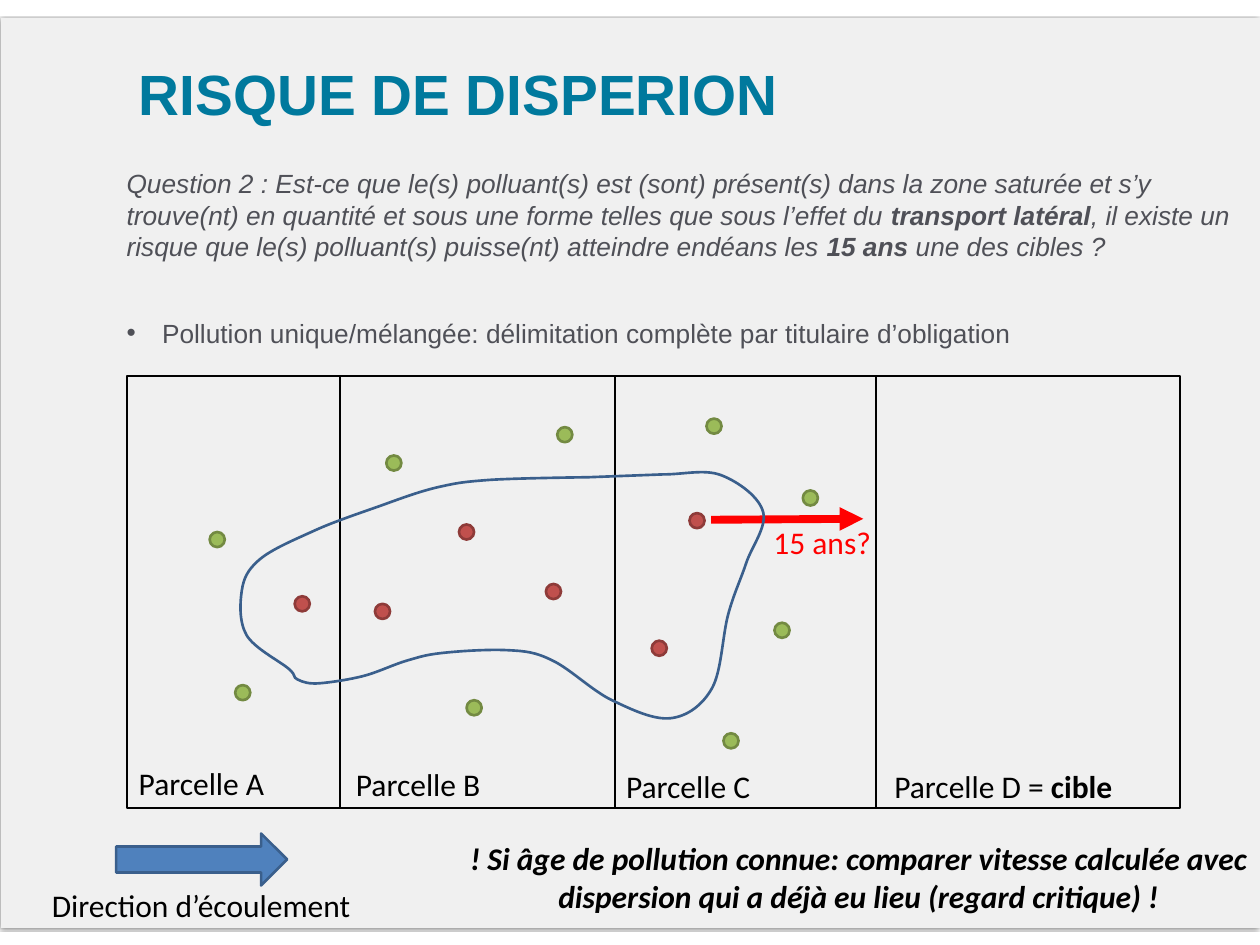
import pptx
import pptx.util
import pptx.dml.color
import pptx.enum.dml
import pptx.enum.shapes
import pptx.enum.text
import pptx.oxml
import pptx.oxml.ns
from pptx.util import Inches

COLORS = {
    "panel": "F0F0F0", "title": "00799D", "body": "4F5057", "black": "000000",
    "green": "9BBB59", "green_edge": "738A42", "red": "C0504D", "red_edge": "8E3B39",
    "flow": "4F81BD", "outline": "3A5F8C", "alert": "FF0000",
}
RGB = {name: pptx.dml.color.RGBColor.from_string(value) for name, value in COLORS.items()}
SHAPE = pptx.enum.shapes.MSO_SHAPE
ALIGN = pptx.enum.text.PP_ALIGN
NS = pptx.oxml.ns.nsdecls("a")


def style(item, fill, line, width):
    item.shadow.inherit = False
    if fill:
        item.fill.solid()
        item.fill.fore_color.rgb = RGB[fill]
    else:
        item.fill.background()
    if line:
        item.line.color.rgb = RGB[line]
        item.line.width = pptx.util.Pt(width)
    else:
        item.line.fill.background()


def write(paragraph, pieces, size, font, color, italic=False):
    for text, bold in pieces:
        run = paragraph.add_run()
        run.text = text
        run.font.size = pptx.util.Pt(size)
        run.font.name = font
        run.font.bold = bold
        run.font.italic = italic
        run.font.color.rgb = RGB[color]


deck = pptx.Presentation()
deck.slide_width = Inches(13.34)
deck.slide_height = Inches(10)
slide = deck.slides.add_slide(deck.slide_layouts[1])
shapes = slide.shapes

panel = shapes.add_shape(SHAPE.RECTANGLE, Inches(0.01), Inches(0.19), Inches(13.33), Inches(9.63))
style(panel, "panel", None, 0)
panel_effects = panel._element.spPr.find(pptx.oxml.ns.qn("a:effectLst"))
panel_effects.append(pptx.oxml.parse_xml(
    f'<a:outerShdw {NS} blurRad="25400" dist="12700" dir="5400000">'
    '<a:srgbClr val="000000"><a:alpha val="50000"/></a:srgbClr></a:outerShdw>'))
shapes._spTree.insert(2, panel._element)

title = shapes.title
question = slide.placeholders[1]
for holder, (left, top, width, height) in (
    (title, (1.47, 0.62, 12, 1.54)),
    (question, (1.34, 1.77, 11.99, 7.72)),
):
    holder.left, holder.top = Inches(left), Inches(top)
    holder.width, holder.height = Inches(width), Inches(height)
    frame = holder.text_frame
    frame.margin_left = frame.margin_right = frame.margin_top = frame.margin_bottom = 0
    frame.auto_size = pptx.enum.text.MSO_AUTO_SIZE.NONE

title.text_frame.margin_bottom = Inches(0.08)
title.text_frame.text = "RISQUE DE DISPERION\v"
heading = title.text_frame.paragraphs[0]
heading.alignment = ALIGN.LEFT
for run in heading.runs:
    run.font.size = pptx.util.Pt(43.2)
    run.font.name = "Arial"
    run.font.bold = True
    run.font.color.rgb = RGB["title"]

intro = question.text_frame.paragraphs[0]
intro_properties = intro._p.get_or_add_pPr()
intro_properties.set("marL", "0")
intro_properties.set("indent", "0")
intro_properties.append(pptx.oxml.parse_xml(f"<a:buNone {NS}/>"))
write(intro, [
    ("Question 2 : Est-ce que le(s) polluant(s) est (sont) présent(s) dans la zone saturée "
     "et s’y trouve(nt) en quantité et sous une forme telles que sous l’effet du ", False),
    ("transport latéral", True),
    (", il existe un risque que le(s) polluant(s) puisse(nt) atteindre endéans les ", False),
    ("15 ans ", True),
    ("une des cibles ?", False),
], 20, "Arial", "body", italic=True)
delimitation = question.text_frame.add_paragraph()
write(delimitation, [
    ("Pollution unique/mélangée: délimitation complète par titulaire d’obligation", False),
], 20, "Arial", "body")
for paragraph, before in ((intro, 0), (delimitation, 33)):
    paragraph.space_before = pptx.util.Pt(before)
    paragraph.space_after = pptx.util.Pt(9)
    paragraph.line_spacing = 1.0

site = shapes.add_shape(SHAPE.RECTANGLE, Inches(1.34), Inches(3.98), Inches(11.15), Inches(4.57))
style(site, None, "black", 1.5)

lines = [(x, 3.98, x, 8.54, "black", 1.5) for x in (3.6, 6.51, 9.27)]
lines.append((7.53, 5.5, 9.14, 5.49, "alert", 6))
for x1, y1, x2, y2, color, width in lines:
    line = shapes.add_connector(pptx.enum.shapes.MSO_CONNECTOR.STRAIGHT,
                                Inches(x1), Inches(y1), Inches(x2), Inches(y2))
    line.line.color.rgb = RGB[color]
    line.line.width = pptx.util.Pt(width)
    if color == "alert":
        line.line._get_or_add_ln().append(pptx.oxml.parse_xml(f'<a:tailEnd {NS} type="triangle"/>'))
    line._element.spPr.append(pptx.oxml.parse_xml(f"<a:effectLst {NS}/>"))

wells = {
    "green": [(2.22, 5.63), (2.49, 7.25), (4.94, 7.41), (4.09, 4.82), (5.9, 4.52),
              (7.66, 7.76), (8.2, 6.59), (7.48, 4.43), (8.5, 5.19)],
    "red": [(6.9, 6.78), (7.3, 5.43), (4.86, 5.55), (5.78, 6.18), (3.97, 6.39), (3.12, 6.31)],
}
for color, places in wells.items():
    for x, y in places:
        well = shapes.add_shape(SHAPE.OVAL, Inches(x), Inches(y), Inches(0.16), Inches(0.16))
        style(well, color, color + "_edge", 2)

plume_start = (3.06, 7.08)
plume_curves = [
    ((2.97, 7), (2.69, 6.86), (2.61, 6.72)),
    ((2.53, 6.58), (2.54, 6.38), (2.56, 6.25)),
    ((2.58, 6.12), (2.62, 6.03), (2.75, 5.92)),
    ((2.88, 5.81), (3.12, 5.71), (3.34, 5.61)),
    ((3.56, 5.51), (3.87, 5.41), (4.09, 5.33)),
    ((4.31, 5.25), (4.48, 5.19), (4.66, 5.15)),
    ((4.84, 5.11), (4.9, 5.1), (5.16, 5.08)),
    ((5.42, 5.06), (6.23, 5.05), (6.23, 5.05)),
    ((7.02, 5.02),),
    ((7.25, 5.02), (7.46, 4.96), (7.64, 5.03)),
    ((7.82, 5.1), (8.04, 5.26), (8.08, 5.42)),
    ((8.12, 5.58), (7.96, 5.78), (7.9, 5.96)),
    ((7.84, 6.14), (7.77, 6.28), (7.71, 6.5)),
    ((7.65, 6.72), (7.64, 7.1), (7.54, 7.28)),
    ((7.44, 7.46), (7.28, 7.58), (7.1, 7.6)),
    ((6.92, 7.62), (6.69, 7.51), (6.48, 7.41)),
    ((6.27, 7.31), (6.04, 7.08), (5.85, 6.99)),
    ((5.67, 6.9), (5.57, 6.89), (5.37, 6.88)),
    ((5.17, 6.87), (4.86, 6.89), (4.68, 6.91)),
    ((4.5, 6.93), (4.45, 6.95), (4.31, 6.99)),
    ((4.17, 7.03), (4.01, 7.11), (3.86, 7.15)),
    ((3.71, 7.19), (3.51, 7.22), (3.39, 7.23)),
    ((3.27, 7.24), (3.21, 7.22), (3.15, 7.19)),
    ((3.09, 7.16), (3.15, 7.16), (3.06, 7.08)),
]
builder = shapes.build_freeform(Inches(plume_start[0]), Inches(plume_start[1]))
builder.add_line_segments([(Inches(x), Inches(y)) for *_, (x, y) in plume_curves], close=True)
plume = builder.convert_to_shape()
style(plume, None, "outline", 2)
segments = list(plume._element.iter(pptx.oxml.ns.qn("a:lnTo")))
for segment, curve in zip(segments, plume_curves):
    if len(curve) == 3:
        corners = "".join(
            f'<a:pt x="{Inches(x) - plume.left}" y="{Inches(y) - plume.top}"/>' for x, y in curve)
        segment.getparent().replace(segment, pptx.oxml.parse_xml(
            f"<a:cubicBezTo {NS}>{corners}</a:cubicBezTo>"))

flow = shapes.add_shape(SHAPE.RIGHT_ARROW, Inches(1.23), Inches(8.82), Inches(1.81), Inches(0.55))
style(flow, "flow", "outline", 2)

labels = [
    (0.45, 9.33, 7.56, 0.5, [("Direction d’écoulement", False)], "black"),
    (1.37, 8.04, 1.63, 0.5, [("Parcelle A", False)], "black"),
    (3.67, 8.05, 1.63, 0.5, [("Parcelle B", False)], "black"),
    (6.53, 8.07, 1.63, 0.5, [("Parcelle C", False)], "black"),
    (9.37, 8.07, 2.81, 0.5, [("Parcelle D = ", False), ("cible", True)], "black"),
    (8.09, 5.49, 1.47, 0.5, [("15 ans?", False)], "alert"),
    (4.85, 8.83, 8.48, 0.91, [("! Si âge de pollution connue: comparer vitesse calculée avec "
                               "dispersion qui a déjà eu lieu (regard critique) !", True)], "black"),
]
for left, top, width, height, pieces, color in labels:
    label = shapes.add_textbox(Inches(left), Inches(top), Inches(width), Inches(height))
    label.text_frame.word_wrap = True
    label.text_frame.auto_size = pptx.enum.text.MSO_AUTO_SIZE.SHAPE_TO_FIT_TEXT
    remark = pieces[0][1]
    paragraph = label.text_frame.paragraphs[0]
    paragraph.alignment = ALIGN.CENTER if remark else ALIGN.LEFT
    write(paragraph, pieces, 24, "Calibri", color, italic=remark)

deck.save("out.pptx")
